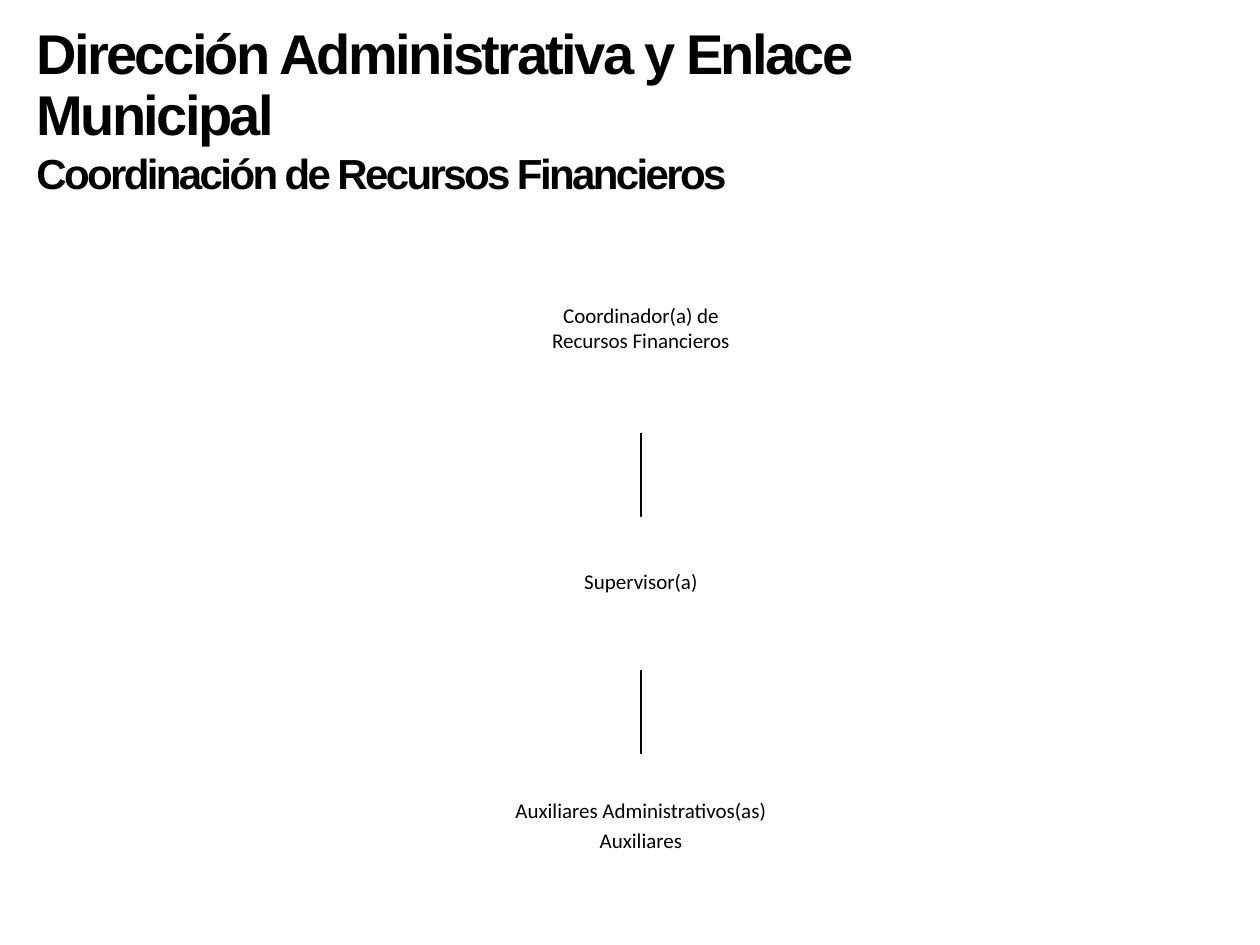
from pptx import Presentation
from pptx.dml.color import RGBColor
from pptx.enum.shapes import MSO_SHAPE
from pptx.enum.text import MSO_ANCHOR, PP_ALIGN
from pptx.util import Pt

PX = 914400 // 126


def rgb(value):
    return RGBColor.from_string(value)


def add_line(tf, i, text, font, fmt):
    p = tf.paragraphs[0] if i == 0 else tf.add_paragraph()
    for key, value in fmt.items():
        setattr(p, key, value)
    r = p.add_run()
    r.text = text
    for key, value in font.items():
        setattr(r.font, key, value)
    r.font.color.rgb = rgb("000000")
    return r


prs = Presentation()
prs.slide_width, prs.slide_height = 1260 * PX, 945 * PX
s = prs.slides.add_slide(prs.slide_layouts[6])

tf = s.shapes.add_textbox(24 * PX, 20 * PX, 940 * PX, 185 * PX).text_frame
tf.word_wrap = True
titles = [
    ("Dirección Administrativa y Enlace Municipal", 32, {"line_spacing": 0.9}),
    ("Coordinación de Recursos Financieros", 24, {}),
]
for i, (text, size, fmt) in enumerate(titles):
    r = add_line(tf, i, text, {"name": "Arial", "size": Pt(size), "bold": True}, fmt)
    r.font._element.set("spc", "-150")

for top in (433, 670):
    path = s.shapes.build_freeform(635, top, scale=PX)
    path.move_to(641, top)
    path.add_line_segments([(641, top + 84)], close=False)
    path.move_to(647, top + 84)
    line = path.convert_to_shape()
    line.shadow.inherit = False
    line.fill.background()
    line.line.color.rgb = rgb("000000")
    line.line.width = Pt(1)

spaced = {"line_spacing": 0.9, "space_after": Pt(4.2)}
posts = [
    (454, 248, 374, 184, 26, ["Coordinador(a) de", "Recursos Financieros"], {}),
    (482, 517, 318, 153, 25, ["Supervisor(a)"], {}),
    (482, 755, 318, 145, 3, ["Auxiliares Administrativos(as)", "Auxiliares"], spaced),
]
for left, top, width, height, bottom, lines, fmt in posts:
    sp = s.shapes.add_shape(MSO_SHAPE.RECTANGLE, left * PX, top * PX, width * PX, height * PX)
    sp.shadow.inherit = False
    sp.fill.solid()
    sp.fill.fore_color.rgb = rgb("FFFFFF")
    sp.line.fill.background()
    tf = sp.text_frame
    frame = {"word_wrap": True, "vertical_anchor": MSO_ANCHOR.MIDDLE, "margin_left": PX,
             "margin_right": PX, "margin_top": PX, "margin_bottom": bottom * PX}
    for key, value in frame.items():
        setattr(tf, key, value)
    for i, text in enumerate(lines):
        add_line(tf, i, text, {"name": "Calibri", "size": Pt(12)}, {"alignment": PP_ALIGN.CENTER, **fmt})

prs.save("out.pptx")
